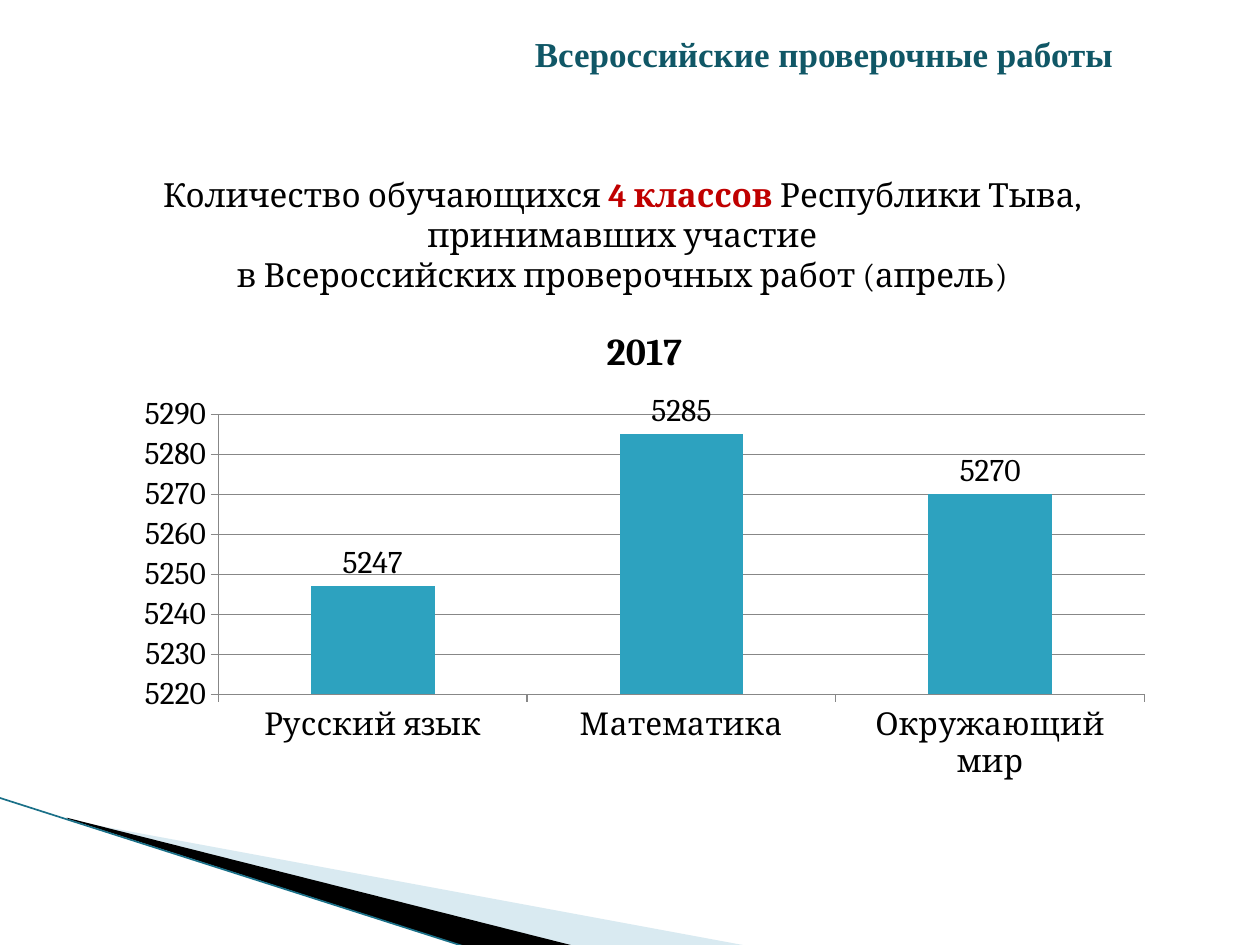
from dataclasses import dataclass
from typing import Optional

from lxml.etree import SubElement
from pptx import Presentation
from pptx.chart.data import CategoryChartData
from pptx.dml.color import RGBColor
from pptx.enum.chart import XL_CHART_TYPE, XL_LABEL_POSITION, XL_TICK_MARK
from pptx.enum.shapes import MSO_CONNECTOR
from pptx.enum.text import MSO_ANCHOR, PP_ALIGN
from pptx.oxml.ns import qn
from pptx.util import Inches, Pt


@dataclass(frozen=True)
class Theme:
    text: RGBColor = RGBColor(0x00, 0x00, 0x00)
    accent: RGBColor = RGBColor(0xC0, 0x00, 0x00)
    heading: RGBColor = RGBColor(0x10, 0x57, 0x66)
    bar: RGBColor = RGBColor(0x2D, 0xA2, 0xBF)
    grid: RGBColor = RGBColor(0x87, 0x87, 0x87)
    pale: RGBColor = RGBColor(0xA0, 0xCB, 0xDC)
    edge: RGBColor = RGBColor(0x1A, 0x70, 0x88)
    body_font: str = "Cambria"
    heading_font: str = "Times New Roman"
    heading_size: Pt = Pt(20)
    body_size: Pt = Pt(19)
    chart_size: Pt = Pt(18)
    chart_title_size: Pt = Pt(21.6)


THEME = Theme()


@dataclass(frozen=True)
class Run:
    text: str
    color: RGBColor
    bold: bool = False


@dataclass(frozen=True)
class TextBlock:
    box: tuple[float, float, float, float]
    lines: list[list[Run]]
    font: str
    size: Pt
    anchor: MSO_ANCHOR = MSO_ANCHOR.TOP


@dataclass(frozen=True)
class Wedge:
    box: tuple[float, float, float, float]
    points: list[tuple[float, float]]
    color: RGBColor
    opacity: Optional[int] = None


WEDGES = [
    Wedge(
        (0.78, 5.47, 4.16, 1.58),
        [(0.55, 6.51), (5.95, 7.51), (4.56, 7.51), (0.55, 6.5)],
        THEME.pale,
        40,
    ),
    Wedge(
        (-0.06, 6.33, 4.16, 0.92),
        [(0.53, 6.49), (4.57, 7.51), (3.72, 7.52), (0.54, 6.5)],
        THEME.text,
    ),
]

TEXT_BLOCKS = [
    TextBlock(
        (0, 1.33, 9.88, 1.06),
        [
            [
                Run("Количество обучающихся ", THEME.text),
                Run("4 классов ", THEME.accent, True),
                Run("Республики Тыва,", THEME.text),
            ],
            [Run("принимавших участие", THEME.text)],
            [Run("в Всероссийских проверочных работ (апрель)", THEME.text)],
        ],
        THEME.body_font,
        THEME.body_size,
        MSO_ANCHOR.MIDDLE,
    ),
    TextBlock(
        (3.35, 0.21, 6.38, 0.44),
        [[Run("Всероссийские проверочные работы", THEME.heading, True)]],
        THEME.heading_font,
        THEME.heading_size,
    ),
]

PARTICIPANTS = {"Русский язык": 5247, "Математика": 5285, "Окружающий мир": 5270}


def set_frame(shape, box: tuple[float, float, float, float]) -> None:
    left, top, width, height = map(Inches, box)
    for outline in shape._element.iter(qn("a:path")):
        outline.set("w", str(width))
        outline.set("h", str(height))
        for point in outline.iter(qn("a:pt")):
            point.set("x", str(int(point.get("x")) + shape.left - left))
            point.set("y", str(int(point.get("y")) + shape.top - top))
    shape.left, shape.top, shape.width, shape.height = left, top, width, height


def draw_wedge(slide, wedge: Wedge) -> None:
    points = [(Inches(x), Inches(y)) for x, y in wedge.points]
    builder = slide.shapes.build_freeform(*points[0])
    builder.add_line_segments(points[1:], close=True)
    shape = builder.convert_to_shape()
    set_frame(shape, wedge.box)
    shape.shadow.inherit = False
    shape.fill.solid()
    shape.fill.fore_color.rgb = wedge.color
    shape.line.fill.background()
    if wedge.opacity is not None:
        color = shape.fill._xPr.find(qn("a:solidFill"))[0]
        SubElement(color, qn("a:alpha")).set("val", str(wedge.opacity * 1000))


def draw_edge(slide) -> None:
    edge = slide.shapes.add_connector(
        MSO_CONNECTOR.STRAIGHT, Inches(-0.01), Inches(6.33), Inches(3.71), Inches(7.52)
    )
    edge.line.color.rgb = THEME.edge
    edge.line.width = Pt(0.95)
    SubElement(edge._element.spPr, qn("a:effectLst"))


def draw_text(slide, block: TextBlock) -> None:
    frame = slide.shapes.add_textbox(*map(Inches, block.box)).text_frame
    frame.word_wrap = True
    frame.vertical_anchor = block.anchor
    for index, line in enumerate(block.lines):
        paragraph = frame.add_paragraph() if index else frame.paragraphs[0]
        paragraph.alignment = PP_ALIGN.CENTER
        paragraph.font.name = block.font
        paragraph.font.size = block.size
        for item in line:
            run = paragraph.add_run()
            run.text = item.text
            run.font.color.rgb = item.color
            run.font.bold = item.bold


def draw_chart(slide, title: str, values: dict[str, int]) -> None:
    data = CategoryChartData()
    data.categories = list(values)
    data.add_series(title, list(values.values()))
    chart = slide.shapes.add_chart(
        XL_CHART_TYPE.COLUMN_CLUSTERED,
        Inches(0.98), Inches(2.41), Inches(8.27), Inches(3.86), data,
    ).chart
    chart.font.name = THEME.body_font
    chart.font.size = THEME.chart_size
    chart.font.color.rgb = THEME.text
    chart.has_legend = False

    chart.has_title = True
    chart.chart_title.include_in_layout = False
    chart.chart_title.text_frame.text = title
    title_font = chart.chart_title.text_frame.paragraphs[0].font
    title_font.name = THEME.body_font
    title_font.size = THEME.chart_title_size
    title_font.bold = True
    title_font.color.rgb = THEME.text

    value_axis = chart.value_axis
    value_axis.minimum_scale = 5220
    value_axis.maximum_scale = 5290
    value_axis.major_unit = 10
    value_axis.has_major_gridlines = True
    for axis in (chart.category_axis, value_axis):
        axis.major_tick_mark = XL_TICK_MARK.OUTSIDE
    for item in (chart.category_axis, value_axis, value_axis.major_gridlines):
        item.format.line.color.rgb = THEME.grid
        item.format.line.width = Pt(0.75)

    plot = chart.plots[0]
    plot.gap_width = 150
    plot.vary_by_categories = False
    fill = plot.series[0].format.fill
    fill.solid()
    fill.fore_color.rgb = THEME.bar
    labels = plot.series[0].data_labels
    labels.show_value = True
    labels.position = XL_LABEL_POSITION.OUTSIDE_END


def main() -> None:
    presentation = Presentation()
    presentation.slide_width = Inches(10)
    presentation.slide_height = Inches(7.5)
    slide = presentation.slides.add_slide(presentation.slide_layouts[6])
    for wedge in WEDGES:
        draw_wedge(slide, wedge)
    draw_edge(slide)
    for block in TEXT_BLOCKS:
        draw_text(slide, block)
    draw_chart(slide, "2017", PARTICIPANTS)
    presentation.save("out.pptx")


if __name__ == "__main__":
    main()
